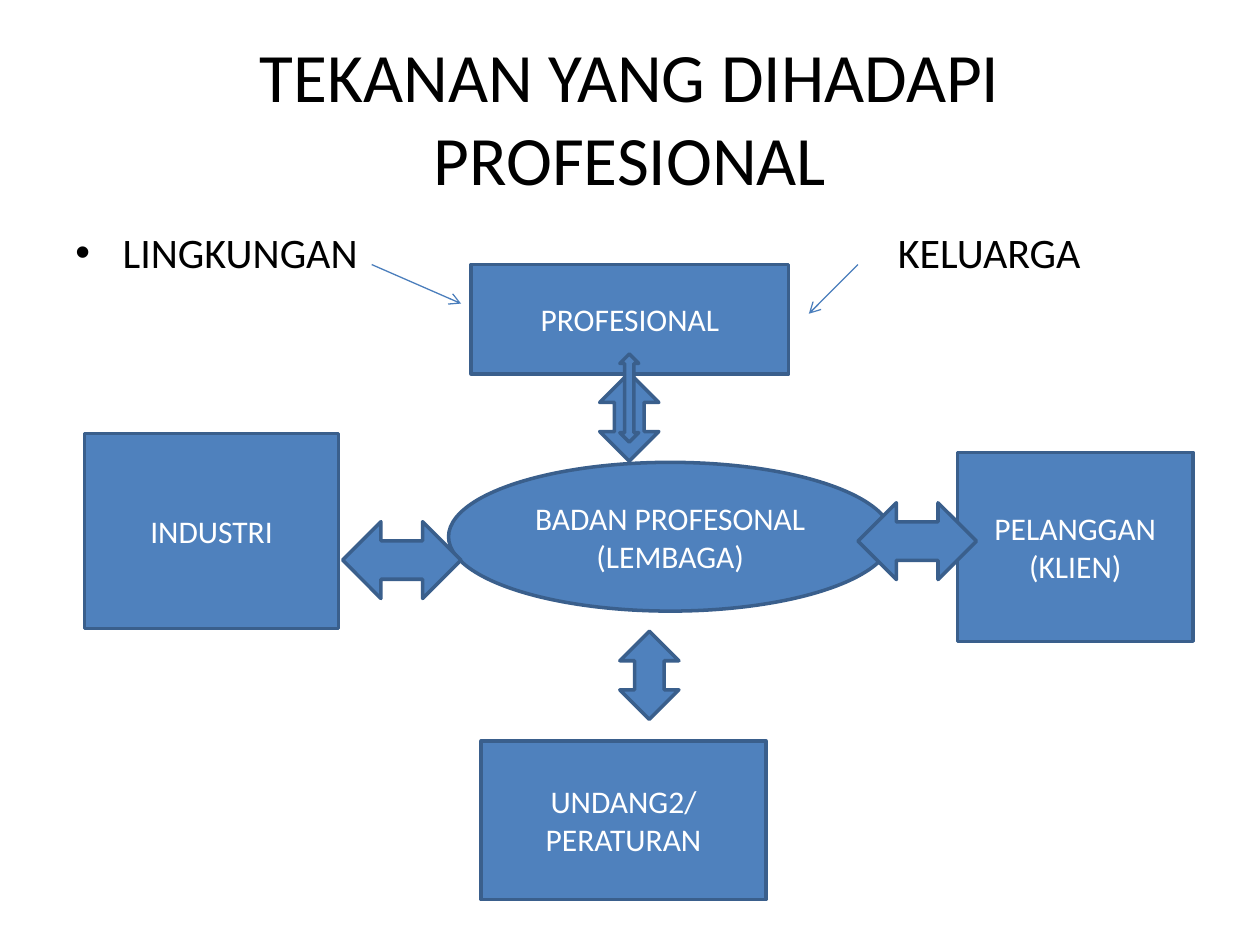
"""Build the slide on pressures that professionals face."""
import dataclasses
import typing

import lxml.etree
import pptx
import pptx.dml.color
import pptx.enum.shapes
import pptx.enum.text
import pptx.oxml.ns
import pptx.util

Pt = pptx.util.Pt
Shape = pptx.enum.shapes.MSO_SHAPE
Align = pptx.enum.text.PP_ALIGN
Anchor = pptx.enum.text.MSO_ANCHOR


@dataclasses.dataclass(frozen=True)
class Theme:
    font: str = "Calibri"
    ink: str = "000000"
    light: str = "FFFFFF"
    fill: str = "4F81BD"
    outline: str = "3A5F8C"
    pointer: str = "4B7EBC"
    title: float = 39.6
    body: float = 24
    label: float = 18
    border: float = 2
    hairline: float = 0.75
    hanging: float = 27


class Node(typing.NamedTuple):
    kind: Shape
    left: float
    top: float
    width: float
    height: float
    lines: tuple[str, ...] = ()


class Pointer(typing.NamedTuple):
    x1: float
    y1: float
    x2: float
    y2: float


THEME = Theme()
WIDE = (67.7, 43.9)
TALL = (33.8, 50.4)
SLIM = (10.8, 50.4)

NODES = (
    Node(Shape.RECTANGLE, 269.3, 151.2, 181.4, 62.6, ("PROFESIONAL",)),
    Node(Shape.RECTANGLE, 48.2, 247.7, 145.4, 111.6, ("INDUSTRI",)),
    Node(Shape.RECTANGLE, 547.2, 258.5, 134.6, 108, ("PELANGGAN", "(KLIEN)")),
    Node(Shape.OVAL, 256.3, 264.2, 253.4, 85, ("BADAN PROFESONAL", "(LEMBAGA)")),
    Node(Shape.RECTANGLE, 275, 423.4, 162.7, 90.7, ("UNDANG2/", "PERATURAN")),
    Node(Shape.LEFT_RIGHT_ARROW, 195.8, 298.1, *WIDE),
    Node(Shape.LEFT_RIGHT_ARROW, 490.3, 287.3, *WIDE),
    Node(Shape.UP_DOWN_ARROW, 342.7, 213.1, *TALL),
    Node(Shape.UP_DOWN_ARROW, 354.2, 202.3, *SLIM),
    Node(Shape.UP_DOWN_ARROW, 354.2, 360.7, *TALL),
)
POINTERS = (
    Pointer(212.4, 151.2, 263.5, 173.5),
    Pointer(490.3, 151.2, 462.2, 179.3),
)


def rgb(value: str) -> pptx.dml.color.RGBColor:
    return pptx.dml.color.RGBColor.from_string(value)


def add_xml(parent, tag: str, **attrs: str):
    return lxml.etree.SubElement(parent, pptx.oxml.ns.qn(tag), attrs)


def write(tf, *lines: str, size: float, color: str, align=Align.CENTER,
          anchor=Anchor.MIDDLE, bullet: str = "") -> None:
    tf.word_wrap = True
    tf.vertical_anchor = anchor
    for i, line in enumerate(lines):
        p = tf.add_paragraph() if i else tf.paragraphs[0]
        p.alignment = align
        if bullet:
            pPr = p._p.get_or_add_pPr()
            pPr.set("marL", str(Pt(THEME.hanging)))
            pPr.set("indent", str(-Pt(THEME.hanging)))
            add_xml(pPr, "a:buFont", typeface="Arial")
            add_xml(pPr, "a:buChar", char=bullet)
        r = p.add_run()
        r.text = line
        r.font.name = THEME.font
        r.font.size = Pt(size)
        r.font.color.rgb = rgb(color)


def add_text(s, left: float, top: float, width: float, height: float,
             text: str, **style) -> None:
    box = s.shapes.add_textbox(Pt(left), Pt(top), Pt(width), Pt(height))
    write(box.text_frame, text, color=THEME.ink, **style)


def add_node(s, node: Node) -> None:
    sp = s.shapes.add_shape(node.kind, Pt(node.left), Pt(node.top),
                            Pt(node.width), Pt(node.height))
    sp.shadow.inherit = False
    sp.fill.solid()
    sp.fill.fore_color.rgb = rgb(THEME.fill)
    sp.line.color.rgb = rgb(THEME.outline)
    sp.line.width = Pt(THEME.border)
    write(sp.text_frame, *node.lines, size=THEME.label, color=THEME.light)


def add_pointer(s, pointer: Pointer) -> None:
    line = s.shapes.add_connector(pptx.enum.shapes.MSO_CONNECTOR.STRAIGHT,
                                  *(Pt(v) for v in pointer))
    line.line.color.rgb = rgb(THEME.pointer)
    line.line.width = Pt(THEME.hairline)
    add_xml(line.line._get_or_add_ln(), "a:tailEnd", type="arrow")
    add_xml(line._element.spPr, "a:effectLst")


def main() -> None:
    prs = pptx.Presentation()
    prs.slide_width, prs.slide_height = Pt(720), Pt(540)
    s = prs.slides.add_slide(prs.slide_layouts[6])
    add_text(s, 36, 21.6, 648, 90, "TEKANAN YANG DIHADAPI PROFESIONAL",
             size=THEME.title)
    body = dict(size=THEME.body, align=Align.LEFT, anchor=Anchor.TOP)
    add_text(s, 36, 126, 220, 36, "LINGKUNGAN", bullet="•", **body)
    add_text(s, 506, 126, 178, 36, "KELUARGA", **body)
    for node in NODES:
        add_node(s, node)
    for pointer in POINTERS:
        add_pointer(s, pointer)
    prs.save("out.pptx")


if __name__ == "__main__":
    main()
